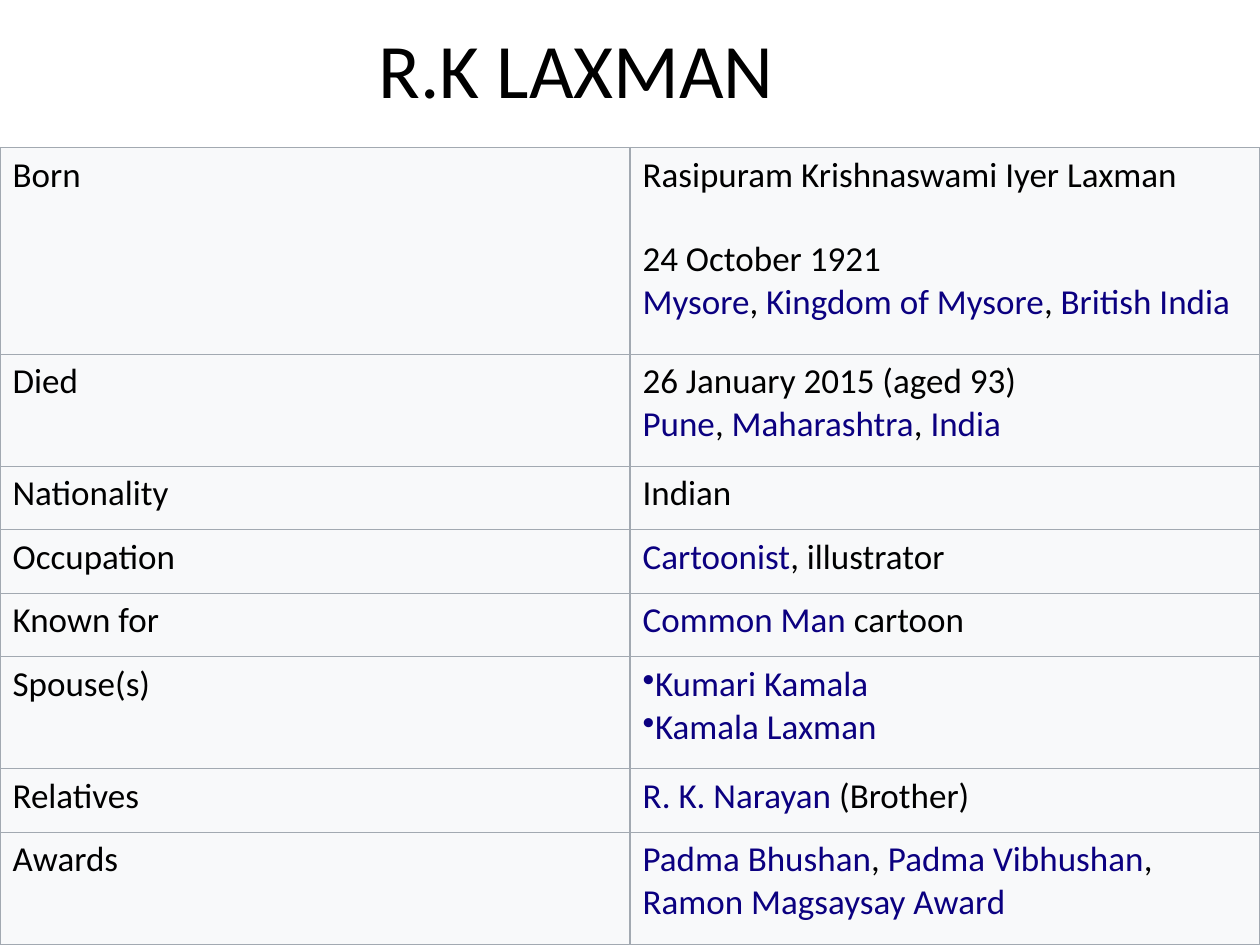
from lxml import etree
from pptx import Presentation
from pptx.dml.color import RGBColor
from pptx.enum.text import MSO_ANCHOR, MSO_AUTO_SIZE, PP_ALIGN
from pptx.oxml.ns import qn
from pptx.util import Cm, Pt

LEFT, TOP = PP_ALIGN.LEFT, MSO_ANCHOR.TOP
GROW = MSO_AUTO_SIZE.SHAPE_TO_FIT_TEXT
FONT = "Calibri"
BLACK = RGBColor(0x00, 0x00, 0x00)
LINK_BLUE = RGBColor(0x0B, 0x00, 0x80)
CELL_GREY = RGBColor(0xF8, 0xF9, 0xFA)
BORDER_GREY = RGBColor(0xA2, 0xA9, 0xB1)

TITLE = "R.K LAXMAN"
# Text between bars is shown in the link colour.
FACTS = [
    ("Born", ["Rasipuram Krishnaswami Iyer Laxman",
              "24 October 1921\n|Mysore|, |Kingdom of Mysore|, |British India|"], 4.17),
    ("Died", ["26 January 2015 (aged 93)\n|Pune|, |Maharashtra|, |India|"], 2.26),
    ("Nationality", ["Indian"], 1.28),
    ("Occupation", ["|Cartoonist|, illustrator"], 1.28),
    ("Known for", ["|Common Man| cartoon"], 1.28),
    ("Spouse(s)", ["|Kumari Kamala|", "|Kamala Laxman|"], 2.26),
    ("Relatives", ["|R. K. Narayan| (Brother)"], 1.28),
    ("Awards", ["|Padma Bhushan|, |Padma Vibhushan|, |Ramon Magsaysay Award|"], 2.26),
]
BULLETED = {"Spouse(s)"}
PARAGRAPH_GAP = {"Born": 24}


def write(frame, paragraphs, size=20, gap=0, bullet=None):
    for index, text in enumerate(paragraphs):
        para = frame.paragraphs[0] if index == 0 else frame.add_paragraph()
        para.alignment = LEFT
        para.space_before = Pt(gap if index else 0)
        if bullet:
            etree.SubElement(para._p.get_or_add_pPr(), qn("a:buChar"), char=bullet)
        for part, piece in enumerate(text.split("|")):
            for line, words in enumerate(piece.split("\n")):
                if line:
                    para.add_line_break()
                if words:
                    span = para.add_run()
                    span.text = words
                    span.font.name = FONT
                    span.font.size = Pt(size)
                    span.font.color.rgb = LINK_BLUE if part % 2 else BLACK


def format_cell(cell):
    properties = cell._tc.get_or_add_tcPr()
    for side in ("lnL", "lnR", "lnT", "lnB"):
        border = etree.SubElement(properties, qn(f"a:{side}"), w=str(Pt(0.75)))
        fill = etree.SubElement(border, qn("a:solidFill"))
        etree.SubElement(fill, qn("a:srgbClr"), val=str(BORDER_GREY))
    cell.fill.solid()
    cell.fill.fore_color.rgb = CELL_GREY
    cell.vertical_anchor = TOP


def add_title(page):
    title = page.shapes.title
    title.left, title.top = Cm(7.62), Cm(0.43)
    title.width, title.height = Cm(10.24), Cm(1.93)
    frame = title.text_frame
    frame.margin_left = frame.margin_right = frame.margin_top = frame.margin_bottom = 0
    frame.vertical_anchor = TOP
    frame.word_wrap = True
    frame.auto_size = GROW
    write(frame, [TITLE], size=44)


def add_facts(page):
    height = sum(fact[2] for fact in FACTS)
    table = page.shapes.add_table(len(FACTS), 2, 0, Cm(2.97), Cm(25.4), Cm(height)).table
    table.first_row = table.horz_banding = False
    for row, (label, details, row_height) in zip(table.rows, FACTS):
        row.height = Cm(row_height)
        for cell in row.cells:
            format_cell(cell)
        write(row.cells[0].text_frame, [label])
        write(row.cells[1].text_frame, details, gap=PARAGRAPH_GAP.get(label, 0),
              bullet="•" if label in BULLETED else None)


def main():
    deck = Presentation()
    deck.slide_width, deck.slide_height = Cm(25.4), Cm(19.05)
    page = deck.slides.add_slide(deck.slide_layouts[5])
    add_title(page)
    add_facts(page)
    deck.save("out.pptx")


if __name__ == "__main__":
    main()
